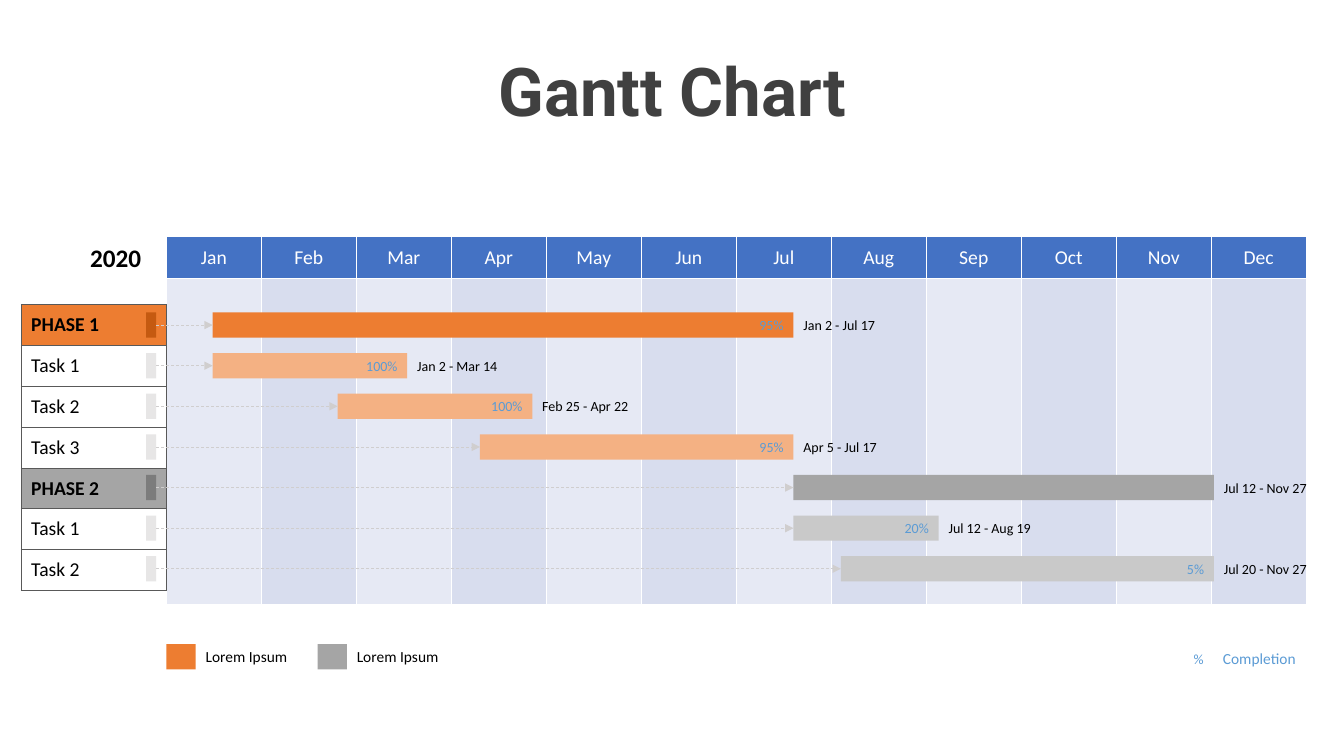
from lxml import etree
from pptx import Presentation
from pptx.dml.color import RGBColor
from pptx.enum.dml import MSO_LINE
from pptx.enum.shapes import MSO_CONNECTOR, MSO_SHAPE
from pptx.enum.text import MSO_ANCHOR, MSO_AUTO_SIZE, PP_ALIGN
from pptx.oxml.ns import qn
from pptx.util import Inches, Pt

LEFT, CENTER, RIGHT = PP_ALIGN.LEFT, PP_ALIGN.CENTER, PP_ALIGN.RIGHT
MIDDLE, TOP = MSO_ANCHOR.MIDDLE, MSO_ANCHOR.TOP
RECTANGLE, STRAIGHT, DASH = MSO_SHAPE.RECTANGLE, MSO_CONNECTOR.STRAIGHT, MSO_LINE.DASH
FIT_SHAPE, NO_FIT = MSO_AUTO_SIZE.SHAPE_TO_FIT_TEXT, MSO_AUTO_SIZE.NONE

COLORS = {
    "title": "404040", "text": "000000", "white": "FFFFFF", "percent": "5B9BD5",
    "header": "4472C4", "month": "CFD5EA", "border": "595959", "arrow": "D0CECE",
    "orange": "ED7D31", "light orange": "F4B183", "dark orange": "C55A11",
    "gray": "A5A5A5", "light gray": "C9C9C9", "dark gray": "7C7C7C", "marker": "E7E6E6",
}

# Content
TITLE, YEAR = "Gantt Chart", "2020"
MONTHS = ["Jan", "Feb", "Mar", "Apr", "May", "Jun",
          "Jul", "Aug", "Sep", "Oct", "Nov", "Dec"]
# name, is phase, bar left, bar width, bar color, marker color, percent, dates, dates width
TASKS = [
    ("PHASE 1", True, 2.11, 5.76, "orange", "dark orange", "95%", "Jan 2 - Jul 17", 0.91),
    ("Task 1", False, 2.11, 1.93, "light orange", "marker", "100%", "Jan 2 - Mar 14", 1.0),
    ("Task 2", False, 3.35, 1.93, "light orange", "marker", "100%", "Feb 25 - Apr 22", 1.06),
    ("Task 3", False, 4.76, 3.11, "light orange", "marker", "95%", "Apr 5 - Jul 17", 0.93),
    ("PHASE 2", True, 7.87, 4.17, "gray", "dark gray", "", "Jul 12 - Nov 27", 1.03),
    ("Task 1", False, 7.87, 1.44, "light gray", "marker", "20%", "Jul 12 - Aug 19", 1.02),
    ("Task 2", False, 8.34, 3.7, "light gray", "marker", "5%", "Jul 20 - Nov 27", 1.03),
]
LEGEND = [(1.65, "orange", "Lorem Ipsum"), (3.15, "gray", "Lorem Ipsum")]

# Layout in inches
CHART_LEFT, CHART_TOP, CHART_WIDTH = 1.65, 2.35, 11.31
HEADER_HEIGHT, BODY_HEIGHT = 0.41, 3.24
NAMES_LEFT, NAMES_TOP, NAMES_WIDTH, NAMES_HEIGHT = 0.21, 3.02, 1.44, 2.84
BAR_TOP, BAR_STEP, BAR_HEIGHT = 3.1, 0.403, 0.25
MARKER_LEFT, MARKER_WIDTH = 1.45, 0.1
LEGEND_TOP, SWATCH_WIDTH = 6.39, 0.29


def rgb(name):
    return RGBColor.from_string(COLORS[name])


def write(frame, text, size, color="text", align=LEFT, bold=False, font="Calibri"):
    para = frame.paragraphs[0]
    para.alignment = align
    span = para.add_run()
    span.text = text
    span.font.name = font
    span.font.size = Pt(size)
    span.font.bold = bold
    span.font.color.rgb = rgb(color)


def add_label(shapes, left, top, width, height, text, size, anchor=MIDDLE, **style):
    box = shapes.add_textbox(Inches(left), Inches(top), Inches(width), Inches(height))
    frame = box.text_frame
    frame.word_wrap = False
    frame.auto_size = FIT_SHAPE
    frame.vertical_anchor = anchor
    write(frame, text, size, **style)


def add_block(shapes, left, top, width, color):
    block = shapes.add_shape(RECTANGLE, Inches(left), Inches(top),
                             Inches(width), Inches(BAR_HEIGHT))
    block.shadow.inherit = False
    block.fill.solid()
    block.fill.fore_color.rgb = rgb(color)
    block.line.fill.background()
    return block


def add_grid(page, rows, columns, left, top, width, height):
    grid = page.shapes.add_table(rows, columns, Inches(left), Inches(top),
                                 Inches(width), Inches(height)).table
    grid.first_row = grid.horz_banding = False
    return grid


def style_cell(cell, sides, border, fill=None, opacity=100):
    """Cell borders come before the fill in the cell properties."""
    properties = cell._tc.get_or_add_tcPr()
    for side in sides:
        line = etree.SubElement(properties, qn("a:ln" + side), w=str(Pt(0.5)))
        solid = etree.SubElement(line, qn("a:solidFill"))
        etree.SubElement(solid, qn("a:srgbClr"), val=COLORS[border])
    cell.vertical_anchor = MIDDLE
    if fill is None:
        cell.fill.background()
        return
    cell.fill.solid()
    cell.fill.fore_color.rgb = rgb(fill)
    if opacity < 100:
        color = properties.find(qn("a:solidFill")).find(qn("a:srgbClr"))
        etree.SubElement(color, qn("a:alpha"), val=str(opacity * 1000))


def add_arrow(page, marker, bar):
    arrow = page.shapes.add_connector(STRAIGHT, 0, 0, 0, 0)
    arrow.begin_connect(marker, 3)
    arrow.end_connect(bar, 1)
    arrow.line.color.rgb = rgb("arrow")
    arrow.line.width = Pt(0.5)
    arrow.line.dash_style = DASH
    etree.SubElement(arrow.line._get_or_add_ln(), qn("a:tailEnd"), type="triangle")
    etree.SubElement(arrow._element.spPr, qn("a:effectLst"))


def add_title(page):
    title = page.shapes.title
    title.left, title.top = Inches(1.4), Inches(0.44)
    title.width, title.height = Inches(10.54), Inches(0.91)
    title.text_frame.auto_size = NO_FIT
    title.text_frame.vertical_anchor = TOP
    write(title.text_frame, TITLE, 48, "title", CENTER, True, "Roboto")


def add_calendar(page):
    grid = add_grid(page, 2, len(MONTHS), CHART_LEFT, CHART_TOP,
                    CHART_WIDTH, HEADER_HEIGHT + BODY_HEIGHT)
    grid.rows[0].height, grid.rows[1].height = Inches(HEADER_HEIGHT), Inches(BODY_HEIGHT)
    for index, month in enumerate(MONTHS):
        head, body = grid.cell(0, index), grid.cell(1, index)
        style_cell(head, "LR", "white", "header")
        write(head.text_frame, month, 14, "white", CENTER)
        style_cell(body, "LR", "white", "month", 80 if index % 2 else 50)


def add_names(page):
    grid = add_grid(page, len(TASKS), 1, NAMES_LEFT, NAMES_TOP, NAMES_WIDTH, NAMES_HEIGHT)
    for index, (name, is_phase, _, _, color, *_) in enumerate(TASKS):
        cell = grid.cell(index, 0)
        style_cell(cell, "LRTB", "border", color if is_phase else None)
        write(cell.text_frame, name, 14, bold=is_phase)


def add_schedule(page):
    for index, task in enumerate(TASKS):
        _, _, left, width, color, marker_color, percent, dates, dates_width = task
        top = BAR_TOP + index * BAR_STEP
        bar = add_block(page.shapes, left, top, width, color)
        if percent:
            frame = bar.text_frame
            frame.margin_top = frame.margin_bottom = 0
            frame.vertical_anchor = MIDDLE
            write(frame, percent, 10, "percent", RIGHT)
        marker = add_block(page.shapes, MARKER_LEFT, top, MARKER_WIDTH, marker_color)
        add_arrow(page, marker, bar)
        add_label(page.shapes, left + width, top - 0.01, dates_width, 0.27, dates, 10)


def add_legend(page):
    for left, color, text in LEGEND:
        shapes = page.shapes.add_group_shape().shapes
        add_block(shapes, left, LEGEND_TOP, SWATCH_WIDTH, color)
        add_label(shapes, left + SWATCH_WIDTH, LEGEND_TOP - 0.02, 1.01, 0.29, text, 11)
    shapes = page.shapes.add_group_shape().shapes
    add_label(shapes, 11.74, 6.41, 0.29, 0.25, "%", 10, color="percent", align=RIGHT)
    add_label(shapes, 12.03, 6.39, 0.92, 0.29, "Completion", 11, color="percent")


def main():
    deck = Presentation()
    deck.slide_width, deck.slide_height = Inches(13.33), Inches(7.5)
    page = deck.slides.add_slide(deck.slide_layouts[5])
    add_title(page)
    add_calendar(page)
    add_names(page)
    add_schedule(page)
    add_label(page.shapes, 0.79, 2.35, 0.71, 0.4, YEAR, 18, TOP, align=RIGHT, bold=True)
    add_legend(page)
    deck.save("out.pptx")


if __name__ == "__main__":
    main()
